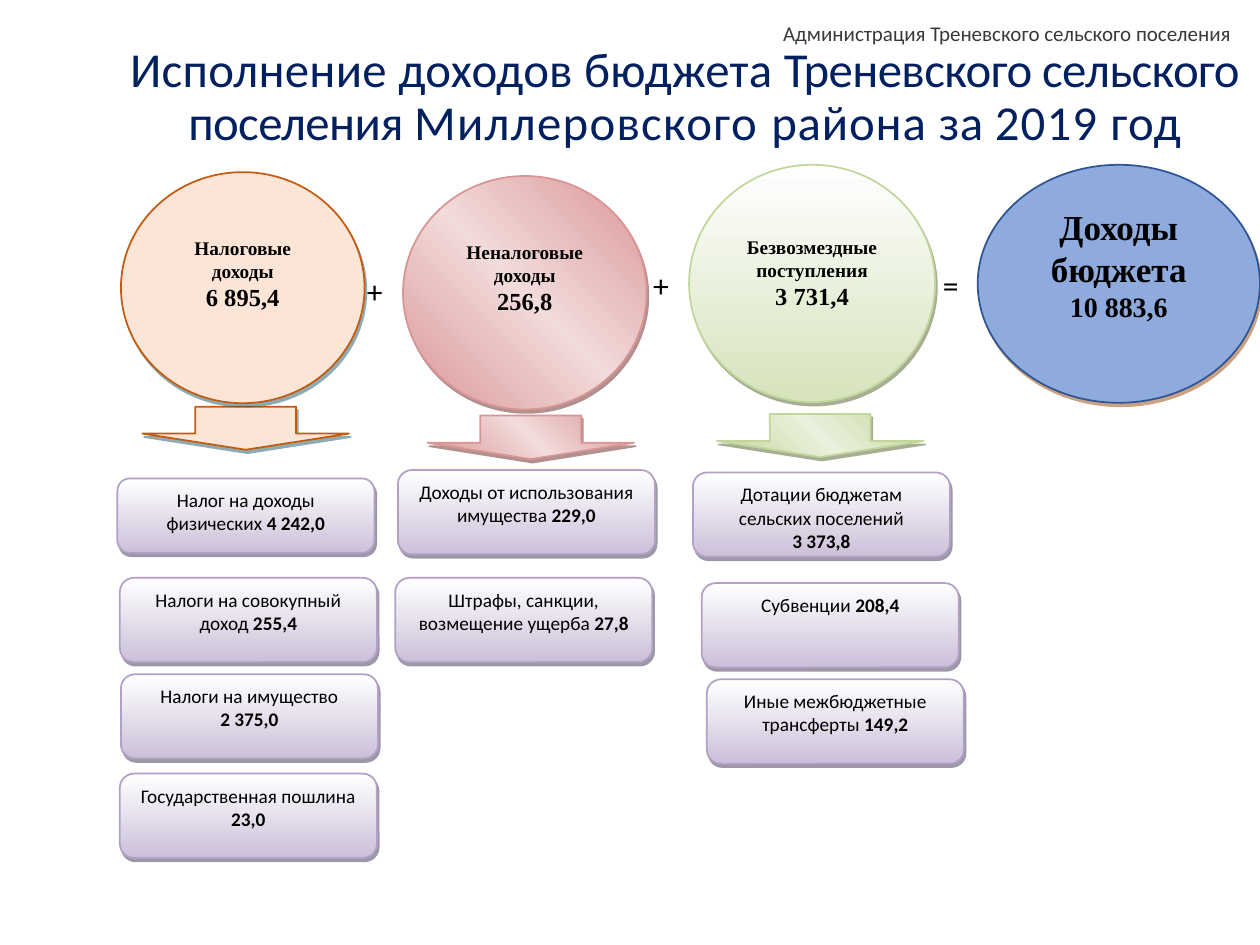
from typing import NamedTuple, Optional

from lxml.etree import SubElement
from pptx import Presentation
from pptx.dml.color import RGBColor
from pptx.enum.shapes import MSO_SHAPE as Shape
from pptx.enum.text import MSO_ANCHOR as Anchor, MSO_AUTO_SIZE as AutoSize, PP_ALIGN as Align
from pptx.oxml.ns import qn
from pptx.util import Pt

COLORS = {
    "title": "002060", "header": "3B3838", "text": "000000", "white": "FFFFFF",
    "peach": "FBE5D6", "orange": "C55A11", "teal": "205867",
    "rose": "D99594", "pale_rose": "F2DBDB", "maroon": "622423",
    "green": "C2D69B", "pale_green": "EAF1DD", "soft_green": "D6E3BC", "olive": "4E6128",
    "blue": "8FAADC", "navy": "2F5597", "brown": "974706",
    "lilac": "CCC0D9", "violet": "B2A1C7", "plum": "3F3151",
}
BODY, SERIF = "Calibri", "Times New Roman"


class Style(NamedTuple):
    fill: tuple  # one colour is solid, several are evenly spaced gradient stops
    line: str
    shadow: str
    angle: int = 90


class Frame(NamedTuple):
    left: float
    top: float
    width: float
    height: float


class Total(NamedTuple):
    label: str
    value: str
    frame: Frame
    style: Style
    label_size: float = 11
    value_size: float = 14
    top_margin: float = 17
    arrow: Optional[Frame] = None
    arrow_style: Optional[Style] = None


class Item(NamedTuple):
    label: str
    value: str
    left: float
    top: float
    height: float = 48.2
    value_below: bool = False


PEACH = Style(("peach",), "orange", "teal")
ROSE = Style(("rose", "pale_rose", "rose"), "rose", "maroon", 315)
GREEN = Style(("white", "soft_green"), "green", "olive")
GREEN_ARROW = Style(("green", "pale_green", "green"), "green", "olive", 315)
BLUE = Style(("blue",), "navy", "brown")
LILAC = Style(("white", "lilac"), "violet", "plum")

TITLE_RUNS = [  # text, letter spacing in hundredths of a point
    ("Исполнение доходов бюджета", 20),
    (" Треневского сельского поселения ", -30),
    ("Миллеровского ", 80), ("района ", 50), ("за ", 20), ("2019 год", 70),
]
TOTALS = [
    Total("Налоговые доходы", "6 895,4", Frame(69.1, 98.4, 139.2, 132), PEACH,
          arrow=Frame(81.4, 232.4, 118, 24.6), arrow_style=PEACH),
    Total("Неналоговые доходы", "256,8", Frame(230.3, 100.6, 139.2, 133.4), ROSE,
          arrow=Frame(244.3, 237.4, 118, 25), arrow_style=ROSE),
    Total("Безвозмездные поступления", "3 731,4", Frame(393.8, 94.2, 140.6, 135.6), GREEN,
          top_margin=20.4, arrow=Frame(409.7, 236.6, 118, 24.6), arrow_style=GREEN_ARROW),
    Total("Доходы бюджета", "10 883,6", Frame(558.7, 94.2, 161.3, 136), BLUE, 20, 16, 3.6),
]
SIGNS = [("+", 199.4, 151.9), ("+", 362.9, 148.3), ("=", 528.5, 148.3)]
ITEMS = [
    Item("Налог на доходы физических", "4 242,0", 67.1, 273.4, 42.5),
    Item("Налоги на совокупный доход", "255,4", 68.5, 330.2),
    Item("Налоги на имущество", "2 375,0", 69.1, 385.3, value_below=True),
    Item("Государственная пошлина", "23,0", 68.5, 442.1),
    Item("Доходы от использования имущества", "229,0", 227.4, 268.6),
    Item("Штрафы, санкции, возмещение ущерба", "27,8", 225.9, 330.2),
    Item("Дотации бюджетам сельских поселений", "3 373,8", 396, 270, value_below=True),
    Item("Субвенции", "208,4", 401, 333.2),
    Item("Иные межбюджетные трансферты", "149,2", 403.9, 388.2),
]
ITEM_WIDTH = 146.9


def rgb(name: str) -> RGBColor:
    return RGBColor.from_string(COLORS[name])


def points(frame: Frame) -> list:
    return [Pt(length) for length in frame]


def add_run(paragraph, text: str, size: float, font: str = BODY,
            color: str = "text", bold: bool = False):
    run = paragraph.add_run()
    run.text = text
    run.font.size, run.font.name, run.font.bold = Pt(size), font, bold
    run.font.color.rgb = rgb(color)
    return run


def add_styled(slide, kind: Shape, frame: Frame, style: Style):
    shape = slide.shapes.add_shape(kind, *points(frame))
    if len(style.fill) == 1:
        shape.fill.solid()
        shape.fill.fore_color.rgb = rgb(style.fill[0])
    else:
        shape.fill.gradient()
        shape.fill.gradient_angle = 360 - style.angle
        stops = shape._element.spPr.find(qn("a:gradFill")).find(qn("a:gsLst"))
        stops.clear()
        for i, color in enumerate(style.fill):
            stop = SubElement(stops, qn("a:gs"), pos=str(100000 * i // (len(style.fill) - 1)))
            SubElement(stop, qn("a:srgbClr"), val=COLORS[color])
    shape.line.color.rgb = rgb(style.line)
    shape.line.width = Pt(1)
    # Half-transparent offset shadow
    shape.shadow.inherit = False
    effects = shape._element.spPr.find(qn("a:effectLst"))
    shadow = SubElement(effects, qn("a:outerShdw"), blurRad="0", dist=str(Pt(2.2)),
                        dir=str(63 * 60000), algn="ctr", rotWithShape="0")
    tint = SubElement(shadow, qn("a:srgbClr"), val=COLORS[style.shadow])
    SubElement(tint, qn("a:alpha"), val="50000")
    shape.text_frame.word_wrap = True
    shape.text_frame.vertical_anchor = Anchor.TOP
    return shape


def add_arrow(slide, frame: Frame, style: Style) -> None:
    arrow = add_styled(slide, Shape.DOWN_ARROW, frame, style)
    arrow.adjustments[0], arrow.adjustments[1] = 0.488, 0.374


def add_total(slide, total: Total) -> None:
    circle = add_styled(slide, Shape.FLOWCHART_CONNECTOR, total.frame, total.style)
    text = circle.text_frame
    text.margin_top = Pt(total.top_margin)
    label, value = text.paragraphs[0], text.add_paragraph()
    label.alignment = value.alignment = Align.CENTER
    add_run(label, total.label, total.label_size, SERIF, bold=True)
    add_run(value, total.value, total.value_size, SERIF, bold=True)


def add_item(slide, item: Item) -> None:
    box = add_styled(slide, Shape.FLOWCHART_ALTERNATE_PROCESS,
                     Frame(item.left, item.top, ITEM_WIDTH, item.height), LILAC)
    paragraph = box.text_frame.paragraphs[0]
    paragraph.alignment = Align.CENTER
    add_run(paragraph, item.label if item.value_below else item.label + " ", 11)
    if item.value_below:
        paragraph.add_line_break()
    add_run(paragraph, item.value, 11, bold=True)


def add_caption(slide, text: str, frame: Frame, size: float, align: Align, color: str):
    caption = slide.shapes.add_textbox(*points(frame)).text_frame
    caption.word_wrap = True
    paragraph = caption.paragraphs[0]
    paragraph.alignment = align
    add_run(paragraph, text, size, color=color)
    return caption


def add_title(slide) -> None:
    title = slide.shapes.title
    title.left, title.top, title.width, title.height = points(Frame(62.6, 23, 657.4, 66))
    text = title.text_frame
    text.word_wrap, text.auto_size = True, AutoSize.NONE
    text.vertical_anchor = Anchor.MIDDLE
    paragraph = text.paragraphs[0]
    paragraph.alignment, paragraph.line_spacing = Align.CENTER, 0.9
    for words, spacing in TITLE_RUNS:
        run = add_run(paragraph, words, 27.9, color="title")
        run._r.get_or_add_rPr().set("spc", str(spacing))


def main() -> None:
    deck = Presentation()
    deck.slide_width, deck.slide_height = Pt(720), Pt(540)
    slide = deck.slides.add_slide(deck.slide_layouts[5])

    # Title and page header
    add_title(slide)
    header = add_caption(slide, "Администрация Треневского сельского поселения",
                         Frame(254.9, 10.1, 455.8, 17.3), 12, Align.RIGHT, "header")
    header.margin_top = header.margin_bottom = 0
    header.vertical_anchor = Anchor.MIDDLE

    # Sum of the income groups
    for total in TOTALS:
        if total.arrow:
            add_arrow(slide, total.arrow, total.arrow_style)
    for sign, left, top in SIGNS:
        add_caption(slide, sign, Frame(left, top, 29.5, 29), 18, Align.CENTER, "text")
    for total in TOTALS:
        add_total(slide, total)

    # Breakdown of each group
    for item in ITEMS:
        add_item(slide, item)

    deck.save("out.pptx")


if __name__ == "__main__":
    main()
